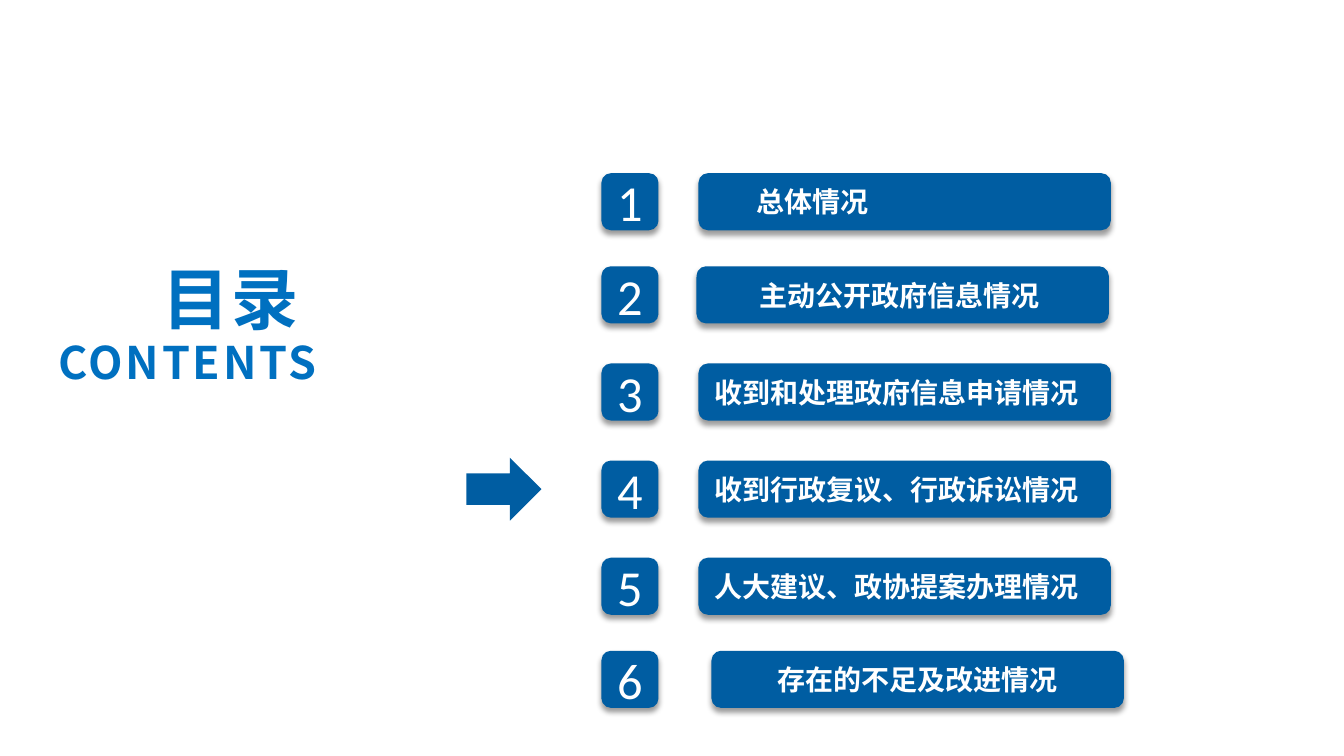
from lxml import etree
from pptx import Presentation
from pptx import util as u
from pptx.dml.color import RGBColor
from pptx.enum import shapes, text
from pptx.oxml import ns

EMU_PER_PX = 9080
SLIDE_SIZE = (1343, 755)

NAVY = RGBColor(0x00, 0x5D, 0xA2)
BLUE = RGBColor(0x00, 0x70, 0xC0)
WHITE = RGBColor(0xFF, 0xFF, 0xFF)
CHINESE_FONT = "Noto Sans CJK SC"
NUMBER_FONT = "Calibri"

INSET_X, INSET_Y = 13, 7
NUMBER_LEFT, BAR_WIDTH, ROW_HEIGHT = 601, 412, 57

# Top, bar left, text inset (None centres the text), wording
ENTRIES = [
    (173, 698, 55, "总体情况"),
    (266, 696, 60, "主动公开政府信息情况"),
    (363, 698, INSET_X, "收到和处理政府信息申请情况"),
    (460, 698, INSET_X, "收到行政复议、行政诉讼情况"),
    (557, 698, INSET_X, "人大建议、政协提案办理情况"),
    (650, 711, None, "存在的不足及改进情况"),
]


def px(length):
    return u.Emu(length * EMU_PER_PX)


def set_frame(frame, anchor, left_inset=INSET_X):
    frame.word_wrap = True
    frame.vertical_anchor = anchor
    frame.margin_left, frame.margin_right = px(left_inset), px(INSET_X)
    frame.margin_top = frame.margin_bottom = px(INSET_Y)


def add_span(para, words, size, color, font, bold):
    span = para.add_run()
    span.text = words
    span.font.size = u.Pt(size)
    span.font.color.rgb = color
    span.font.name = font
    span.font.bold = bold
    properties = span.font._element
    east_asian = etree.SubElement(properties, ns.qn("a:ea"))
    east_asian.set("typeface", font)
    return span


def add_solid(page, kind, left, top, width, height):
    solid = page.shapes.add_shape(kind, px(left), px(top), px(width), px(height))
    solid.shadow.inherit = False
    solid.fill.solid()
    solid.fill.fore_color.rgb = NAVY
    solid.line.fill.background()
    return solid


def add_soft_shadow(shape):
    effects = shape._element.spPr.find(ns.qn("a:effectLst"))
    shadow = etree.SubElement(
        effects, ns.qn("a:outerShdw"), blurRad=str(u.Pt(4)), dist=str(u.Pt(3)),
        dir="5400000", algn="t", rotWithShape="0")
    color = etree.SubElement(shadow, ns.qn("a:srgbClr"), val="000000")
    etree.SubElement(color, ns.qn("a:alpha"), val="40000")


def add_button(page, left, top, width, words, size, font, bold, inset=None):
    button = add_solid(page, shapes.MSO_SHAPE.ROUNDED_RECTANGLE,
                       left, top, width, ROW_HEIGHT)
    add_soft_shadow(button)
    centred = inset is None
    set_frame(button.text_frame, text.MSO_ANCHOR.MIDDLE,
              INSET_X if centred else inset)
    para = button.text_frame.paragraphs[0]
    para.alignment = text.PP_ALIGN.CENTER if centred else text.PP_ALIGN.LEFT
    add_span(para, words, size, WHITE, font, bold)


def add_heading(page):
    title = page.shapes.title
    title.left, title.top, title.width, title.height = map(px, (21, 245, 309, 149))
    frame = title.text_frame
    set_frame(frame, text.MSO_ANCHOR.TOP)
    frame.auto_size = text.MSO_AUTO_SIZE.NONE
    lines = [("目录 ", 48, 61), ("CONTENTS", 32, 36)]
    for index, (words, size, spacing) in enumerate(lines):
        para = frame.add_paragraph() if index else frame.paragraphs[0]
        para.alignment = text.PP_ALIGN.RIGHT
        para.line_spacing = u.Pt(spacing)
        span = add_span(para, words, size, BLUE, CHINESE_FONT, True)
        span.font._element.set("spc", "200")


def main():
    deck = Presentation()
    deck.slide_width, deck.slide_height = map(px, SLIDE_SIZE)
    page = deck.slides.add_slide(deck.slide_layouts[5])

    # Heading
    add_heading(page)

    # Numbered entries
    for number, (top, left, inset, words) in enumerate(ENTRIES, start=1):
        add_button(page, NUMBER_LEFT, top, ROW_HEIGHT, str(number),
                   36, NUMBER_FONT, False)
        add_button(page, left, top, BAR_WIDTH, words, 20, CHINESE_FONT, True, inset)

    # Arrow at the current entry
    add_solid(page, shapes.MSO_SHAPE.RIGHT_ARROW, 466, 457, 75, 63)

    deck.save("out.pptx")


if __name__ == "__main__":
    main()
